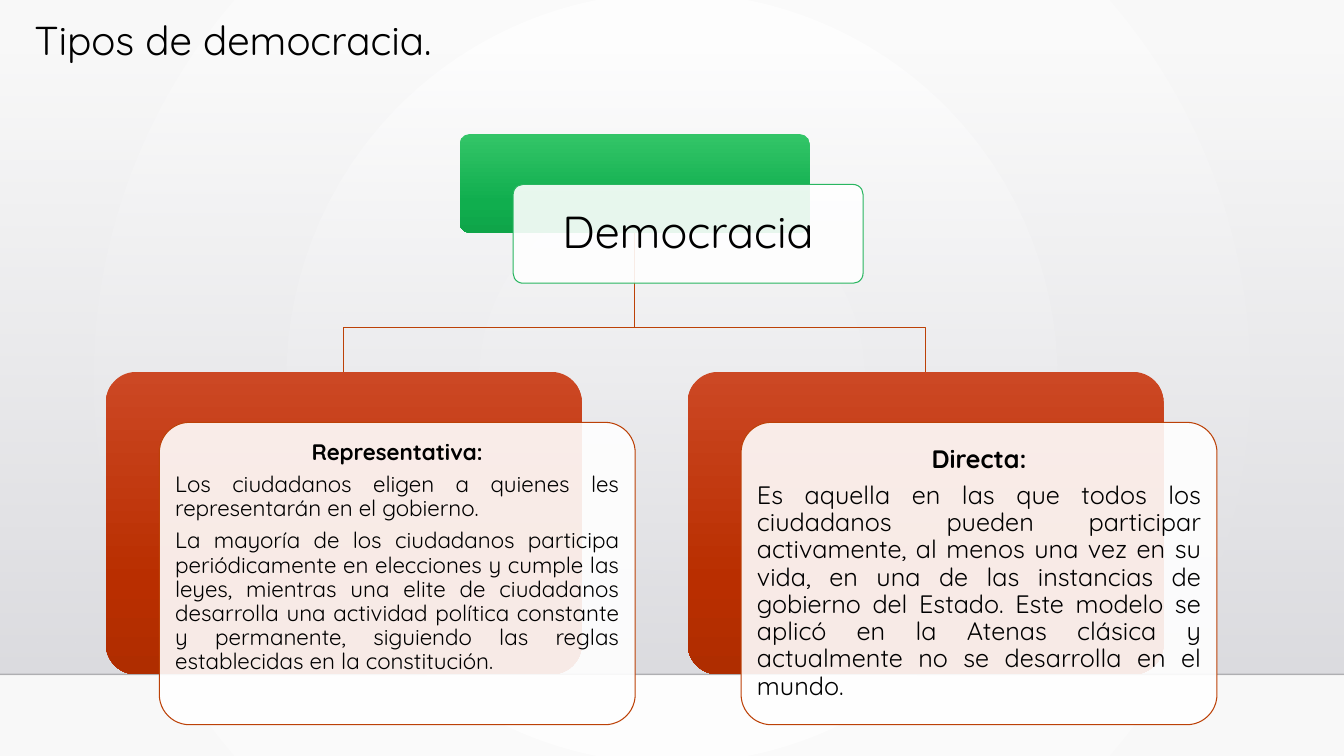
"""Build a slide that charts the types of democracy."""
from lxml import etree
from pptx import Presentation
from pptx import util as u
from pptx.dml.color import RGBColor
from pptx.enum import shapes, text
from pptx.oxml.ns import qn

COLORS = {
    "ink": "000000", "white": "FFFFFF", "edge": "F8F8F8", "floor": "000001",
    "haze_top": "DCDCE0", "haze": "DDDDE1", "green_line": "29B660", "red_line": "BC4107",
    "green_light": "33C568", "green": "10AE4E", "green_dark": "0FA549",
    "red_light": "CC4824", "red": "B92E00", "red_dark": "AF2D00",
}
GREEN = [(0, "green_light"), (69, "green"), (100, "green_dark")]
RED = [(0, "red_light"), (69, "red"), (100, "red_dark")]
ROOT_SIZE, BRANCH_SIZE = (3.47, 0.98), (4.72, 3)
ROOT_LEFT, ROOT_TOP = 4.56, 1.33
BRANCH_TOP, BEND_TOP = 3.69, 3.25
OFFSET_X, OFFSET_Y = 0.53, 0.5
BRANCHES = [
    (1.05, 16, 5.6, 0.38, "Representativa:", [
        "Los ciudadanos eligen a quienes les representarán en el gobierno.",
        "La mayoría de los ciudadanos participa periódicamente en elecciones y cumple las "
        "leyes, mientras una elite de ciudadanos desarrolla una actividad política constante "
        "y permanente, siguiendo las reglas establecidas en la constitución."]),
    (6.82, 18, 6.3, 0.07, "Directa:", [
        "Es aquella en las que todos los ciudadanos pueden participar activamente, al menos "
        "una vez en su vida, en una de las instancias de gobierno del Estado. Este modelo se "
        "aplicó en la Atenas clásica y actualmente no se desarrolla en el mundo."]),
]


class DemocracySlide:
    """Hold the style and the current slide."""

    font = "Quicksand"

    def __init__(self, deck):
        """Add a slide that has only a title."""
        self.slide = deck.slides.add_slide(deck.slide_layouts[5])

    def color(self, name):
        """Return the named colour."""
        return RGBColor.from_string(COLORS[name])

    def fade(self, solid, percent):
        """Set the opacity of a solid fill element."""
        etree.SubElement(solid[0], qn("a:alpha"), val=str(percent * 1000))

    def gradient(self, fill, owner, stops, radial=False):
        """Fill with stops of position, colour and optional opacity."""
        fill.gradient()
        grad = next(owner.iter(qn("a:gradFill")))
        for child in list(grad):
            grad.remove(child)
        stop_list = etree.SubElement(grad, qn("a:gsLst"))
        for position, name, *opacity in stops:
            stop = etree.SubElement(stop_list, qn("a:gs"), pos=str(position * 1000))
            etree.SubElement(stop, qn("a:srgbClr"), val=COLORS[name])
            for percent in opacity:
                self.fade(stop, percent)
        if radial:
            circle = etree.SubElement(grad, qn("a:path"), path="circle")
            sides = dict.fromkeys("ltrb", "50000")
            etree.SubElement(circle, qn("a:fillToRect"), **sides)
        else:
            etree.SubElement(grad, qn("a:lin"), ang="5400000", scaled="0")

    def backdrop(self):
        """Draw the background, the haze and the floor line."""
        self.gradient(self.slide.background.fill, self.slide.element,
                      [(0, "white"), (100, "edge")], radial=True)
        haze = self.box(shapes.MSO_SHAPE.RECTANGLE, 0, 0.51, (13.33, 6.18))
        self.gradient(haze.fill, haze.element.spPr, [(0, "haze_top", 0), (100, "haze", 100)])
        floor = self.slide.shapes.add_connector(
            shapes.MSO_CONNECTOR.STRAIGHT, 0, u.Inches(6.69), u.Inches(13.33), u.Inches(6.69))
        self.stroke(floor, "floor", 1)
        self.fade(next(floor.element.spPr.iter(qn("a:solidFill"))), 20)
        etree.SubElement(floor.element.spPr, qn("a:effectLst"))

    def stroke(self, shape, name, width=0.75):
        """Set the colour and width of an outline."""
        shape.line.color.rgb = self.color(name)
        shape.line.width = u.Pt(width)

    def box(self, kind, left, top, size):
        """Draw a preset shape with neither shadow nor outline."""
        shape = self.slide.shapes.add_shape(kind, *map(u.Inches, (left, top, *size)))
        shape.shadow.inherit = False
        shape.line.fill.background()
        return shape

    def style(self, paragraph, size, align, bold=False, before=0):
        """Format a paragraph and its runs."""
        paragraph.alignment = align
        paragraph.line_spacing = 0.9
        paragraph.space_before = u.Pt(before)
        for run in paragraph.runs:
            run.font.name, run.font.size, run.font.bold = self.font, u.Pt(size), bold
            run.font.color.rgb = self.color("ink")

    def title(self, wording):
        """Place the title in front of the backdrop."""
        title = self.slide.shapes.title
        title.left, title.top, title.width, title.height = map(u.Inches, (0.24, 0, 4.88, 0.85))
        frame = title.text_frame
        frame.text = wording
        frame.auto_size = text.MSO_AUTO_SIZE.NONE
        frame.vertical_anchor = text.MSO_ANCHOR.MIDDLE
        self.style(frame.paragraphs[0], 28.8, text.PP_ALIGN.LEFT)
        self.slide.shapes.element.append(title.element)

    def elbow(self, start_x, end_x):
        """Draw a bent line from the root to a branch."""
        start_y = ROOT_TOP + ROOT_SIZE[1]
        points = [(start_x, BEND_TOP), (end_x, BEND_TOP), (end_x, BRANCH_TOP)]
        builder = self.slide.shapes.build_freeform(u.Inches(start_x), u.Inches(start_y))
        builder.add_line_segments([(u.Inches(x), u.Inches(y)) for x, y in points], close=False)
        line = builder.convert_to_shape()
        line.fill.background()
        line.shadow.inherit = False
        self.stroke(line, "red_line")

    def card(self, left, top, size, stops, outline, inset):
        """Draw a coloured plate with a white card on it, and return the text frame."""
        rounded = shapes.MSO_SHAPE.ROUNDED_RECTANGLE
        plate = self.box(rounded, left, top, size)
        front = self.box(rounded, left + OFFSET_X, top + OFFSET_Y, size)
        for shape in (plate, front):
            shape.adjustments[0] = 0.1
        self.gradient(plate.fill, plate.element.spPr, stops)
        front.fill.solid()
        front.fill.fore_color.rgb = self.color("white")
        self.fade(front.element.spPr.find(qn("a:solidFill")), 90)
        self.stroke(front, outline)
        frame = front.text_frame
        frame.word_wrap = True
        frame.vertical_anchor = text.MSO_ANCHOR.MIDDLE
        frame.margin_left = frame.margin_right = u.Inches(inset)
        frame.margin_top = frame.margin_bottom = u.Inches(inset)
        return frame

    def root(self, wording):
        """Draw the top card."""
        frame = self.card(ROOT_LEFT, ROOT_TOP, ROOT_SIZE, GREEN, "green_line", 0.13)
        frame.text = wording
        self.style(frame.paragraphs[0], 32, text.PP_ALIGN.CENTER)

    def branch(self, left, size, gap, bottom, heading, details):
        """Draw a card with a heading and justified details."""
        frame = self.card(left, BRANCH_TOP, BRANCH_SIZE, RED, "red_line", 0.07)
        frame.margin_bottom = u.Inches(bottom)
        frame.text = "\n".join([heading, *details])
        first, *rest = frame.paragraphs
        self.style(first, size, text.PP_ALIGN.CENTER, bold=True)
        for paragraph in rest:
            self.style(paragraph, size, text.PP_ALIGN.JUSTIFY, before=gap)


def main():
    """Build and save the slide."""
    deck = Presentation()
    deck.slide_width, deck.slide_height = u.Inches(13.33), u.Inches(7.5)
    page = DemocracySlide(deck)
    page.backdrop()
    page.title("Tipos de democracia.")
    for left, *_ in reversed(BRANCHES):
        page.elbow(ROOT_LEFT + ROOT_SIZE[0] / 2, left + BRANCH_SIZE[0] / 2)
    page.root("Democracia")
    for branch in BRANCHES:
        page.branch(*branch)
    deck.save("out.pptx")


if __name__ == "__main__":
    main()
